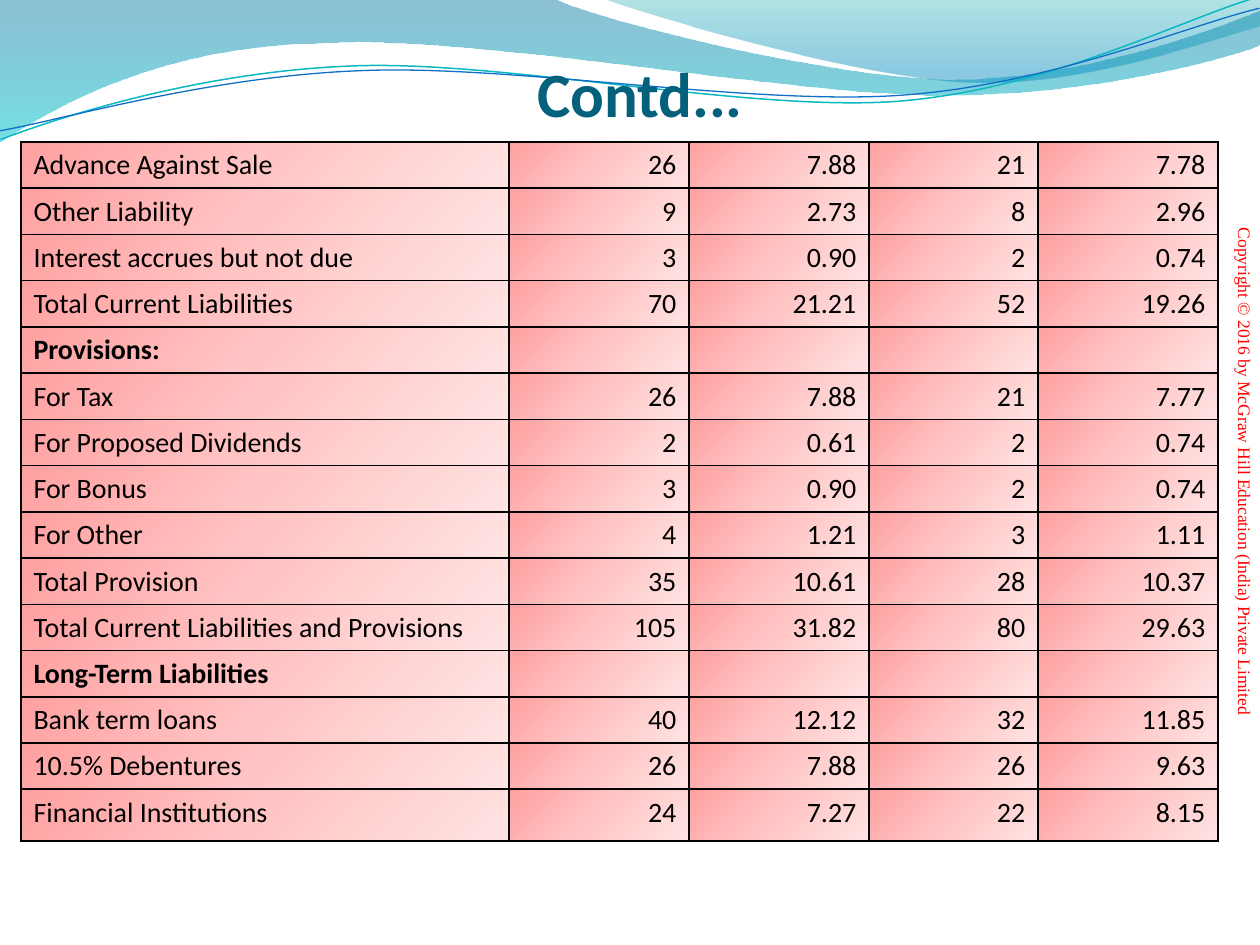
import pptx
import pptx.dml.color
import pptx.enum.text
import pptx.oxml
import pptx.oxml.ns
import pptx.util

PX = 914400 // 126
ALIGN = pptx.enum.text.PP_ALIGN
ANCHOR = pptx.enum.text.MSO_ANCHOR
NS = pptx.oxml.ns.nsdecls("a")

COLORS = {
    "title": "04617B",
    "copyright": "FF0000",
    "text": "000000",
    "border": "000000",
    "cell_dark": "FFA0A0",
    "cell_mid": "FFC5C5",
    "cell_light": "FFE3E3",
    "wave_top": "0074A1",
    "wave_bottom": "00C6CF",
    "crest_top": "00A1A9",
    "crest_bottom": "008BBF",
    "teal_line": "0AB8BF",
    "blue_line": "0F6FC6",
}

CELL_STOPS = [(0, "cell_dark", 100), (50, "cell_mid", 100), (100, "cell_light", 100)]
WAVE_STOPS = [(0, "wave_top", 45), (100, "wave_bottom", 55)]
CREST_STOPS = [(0, "crest_top", 30), (80, "crest_bottom", 45)]

WAVE = [
    [(0, 0)], [(554, -1)],
    [(600, 21), (837, 79), (955, 79)], [(1075, 79), (1207, 33), (1260, 11)],
    [(1261, 45)],
    [(1239, 55), (1096, 96), (940, 95)], [(784, 95), (481, 35), (324, 43)],
    [(163, 45), (58, 105), (-1, 142)],
]
CREST = [
    [(604, -1)],
    [(641, 14), (859, 78), (969, 82)], [(1079, 87), (1211, 40), (1260, 26)],
    [(1260, 0)],
]
TEAL_CURVE = [
    [(-2, 110)],
    [(59, 90), (199, 52), (350, 53)], [(499, 53), (745, 118), (896, 114)],
    [(1049, 109), (1184, 45), (1260, 27)],
]
BLUE_CURVE = [
    [(-2, 101)],
    [(57, 94), (206, 57), (358, 58)], [(509, 58), (750, 112), (902, 108)],
    [(1052, 104), (1188, 52), (1262, 38)],
]
CURVE_ROTATION = -2.7

COLUMN_WIDTHS = [488, 180, 180, 169, 180]
ROW_HEIGHT = 46
LAST_ROW_HEIGHT = 52
HEADINGS = ("Provisions:", "Long-Term Liabilities")
LIABILITIES = [
    ("Advance Against Sale", "26", "7.88", "21", "7.78"),
    ("Other Liability", "9", "2.73", "8", "2.96"),
    ("Interest accrues but not due", "3", "0.90", "2", "0.74"),
    ("Total Current Liabilities", "70", "21.21", "52", "19.26"),
    ("Provisions:", "", "", "", ""),
    ("For Tax", "26", "7.88", "21", "7.77"),
    ("For Proposed Dividends", "2", "0.61", "2", "0.74"),
    ("For Bonus", "3", "0.90", "2", "0.74"),
    ("For Other", "4", "1.21", "3", "1.11"),
    ("Total Provision", "35", "10.61", "28", "10.37"),
    ("Total Current Liabilities and Provisions", "105", "31.82", "80", "29.63"),
    ("Long-Term Liabilities", "", "", "", ""),
    ("Bank term loans", "40", "12.12", "32", "11.85"),
    ("10.5% Debentures", "26", "7.88", "26", "9.63"),
    ("Financial Institutions", "24", "7.27", "22", "8.15"),
]


def rgb(name):
    return pptx.dml.color.RGBColor.from_string(COLORS[name])


def box(*lengths):
    return [length * PX for length in lengths]


def fill_gradient(fill, properties, stops, angle):
    fill.background()
    stops_xml = "".join(
        f'<a:gs pos="{position * 1000}"><a:srgbClr val="{COLORS[color]}">'
        f'<a:alpha val="{opacity * 1000}"/></a:srgbClr></a:gs>'
        for position, color, opacity in stops
    )
    gradient = pptx.oxml.parse_xml(
        f"<a:gradFill {NS}><a:gsLst>{stops_xml}</a:gsLst>"
        f'<a:lin ang="{angle * 60000}" scaled="0"/></a:gradFill>'
    )
    properties.replace(properties.find(pptx.oxml.ns.qn("a:noFill")), gradient)


def format_run(run, size, font, color, bold=False):
    run.font.size = pptx.util.Pt(size)
    run.font.name = font
    run.font.bold = bold
    run.font.color.rgb = rgb(color)


def bend_segments(outline, segments):
    steps = iter(list(outline._element.iter(pptx.oxml.ns.qn("a:lnTo"))))
    for segment in segments:
        first, *others = [next(steps) for _ in segment]
        if not others:
            continue
        bend = pptx.oxml.parse_xml(f"<a:cubicBezTo {NS}/>")
        first.addprevious(bend)
        for step in (first, *others):
            bend.append(step[0])
            step.getparent().remove(step)


def add_outline(slide, segments, closed):
    points = [box(*point) for segment in segments for point in segment]
    builder = slide.shapes.build_freeform(*points[0], scale=1.0)
    builder.add_line_segments(points[1:], close=closed)
    outline = builder.convert_to_shape()
    bend_segments(outline, segments[1:])
    outline.shadow.inherit = False
    return outline


def add_wave(slide, segments, stops):
    wave = add_outline(slide, segments, True)
    fill_gradient(wave.fill, wave._element.spPr, stops, 90)
    wave.line.fill.background()


def add_curve(slide, segments, color, width):
    curve = add_outline(slide, segments, False)
    curve.rotation = CURVE_ROTATION
    curve.fill.background()
    curve.line.color.rgb = rgb(color)
    curve.line.width = pptx.util.Pt(width)


def add_copyright(slide):
    notice = slide.shapes.add_textbox(*box(861, 440, 798, 63))
    notice.rotation = 90
    frame = notice.text_frame
    frame.word_wrap = True
    frame.vertical_anchor = ANCHOR.BOTTOM
    frame.text = "Copyright © 2016 by McGraw Hill Education (India) Private Limited"
    frame.paragraphs[0].alignment = ALIGN.CENTER
    format_run(frame.paragraphs[0].runs[0], 10, "Times New Roman", "copyright")


def add_borders(properties):
    for index, side in enumerate("LRTB"):
        properties.insert(index, pptx.oxml.parse_xml(
            f'<a:ln{side} {NS} w="12700"><a:solidFill>'
            f'<a:srgbClr val="{COLORS["border"]}"/></a:solidFill></a:ln{side}>'
        ))


def fill_cell(cell, text, is_label):
    properties = cell._tc.get_or_add_tcPr()
    fill_gradient(cell.fill, properties, CELL_STOPS, 45)
    add_borders(properties)
    paragraph = cell.text_frame.paragraphs[0]
    paragraph.text = text
    paragraph.alignment = ALIGN.LEFT if is_label else ALIGN.RIGHT
    for run in paragraph.runs:
        format_run(run, 16, "Calibri", "text", text in HEADINGS)
    if not text:
        paragraph._p.append(pptx.oxml.parse_xml(f'<a:endParaRPr {NS} sz="1600"/>'))


def add_liabilities(slide):
    heights = [ROW_HEIGHT] * (len(LIABILITIES) - 1) + [LAST_ROW_HEIGHT]
    table = slide.shapes.add_table(
        len(heights), len(COLUMN_WIDTHS),
        *box(21, 142, sum(COLUMN_WIDTHS), sum(heights)),
    ).table
    table.first_row = False
    table.horz_banding = False
    for column, width in zip(table.columns, COLUMN_WIDTHS):
        column.width = width * PX
    for row, height, entries in zip(table.rows, heights, LIABILITIES):
        row.height = height * PX
        for index, (cell, text) in enumerate(zip(row.cells, entries)):
            fill_cell(cell, text, index == 0)


def place_title(slide):
    title = slide.shapes.title
    title.left, title.top, title.width, title.height = box(451, 48, 378, 89)
    frame = title.text_frame
    frame.text = "Contd..."
    frame.vertical_anchor = ANCHOR.TOP
    frame.auto_size = pptx.enum.text.MSO_AUTO_SIZE.SHAPE_TO_FIT_TEXT
    frame.paragraphs[0].alignment = ALIGN.CENTER
    format_run(frame.paragraphs[0].runs[0], 36, "Calibri", "title", True)
    slide.shapes._spTree.append(title._element)


def main():
    presentation = pptx.Presentation()
    presentation.slide_width, presentation.slide_height = box(1260, 945)
    slide = presentation.slides.add_slide(presentation.slide_layouts[5])
    add_wave(slide, WAVE, WAVE_STOPS)
    add_wave(slide, CREST, CREST_STOPS)
    add_curve(slide, TEAL_CURVE, "teal_line", 0.85)
    add_curve(slide, BLUE_CURVE, "blue_line", 0.75)
    add_copyright(slide)
    add_liabilities(slide)
    place_title(slide)
    presentation.save("out.pptx")


if __name__ == "__main__":
    main()
